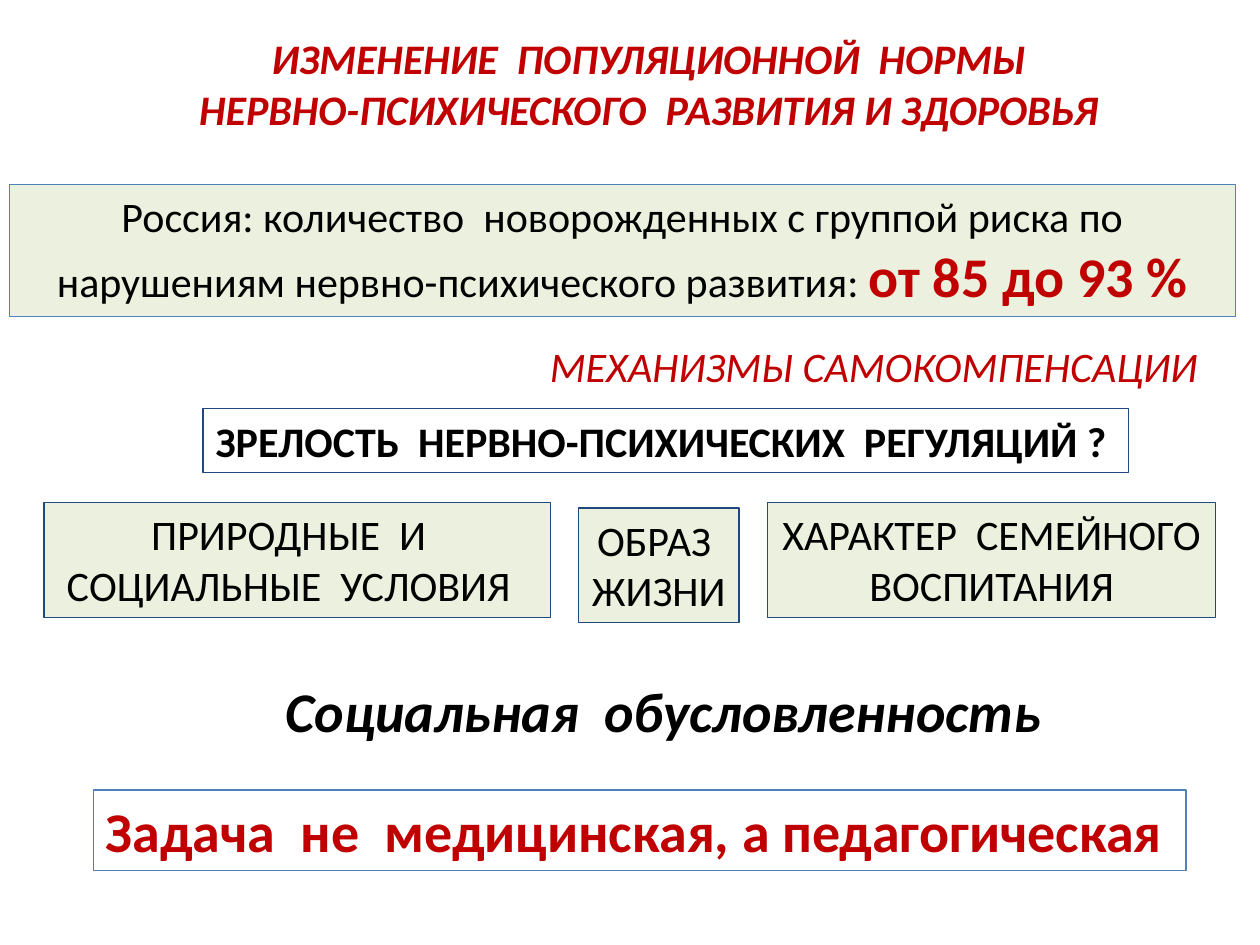
from pptx import Presentation
from pptx.dml.color import RGBColor
from pptx.enum.shapes import MSO_SHAPE as Shape
from pptx.enum.text import MSO_ANCHOR as Anchor, MSO_AUTO_SIZE as AutoSize, PP_ALIGN as Align
from pptx.util import Pt

RED, BLACK, PALE_GREEN, BLUE, NAVY = "C00000", "000000", "EBF1DE", "4F81BD", "1F497D"


def color(hex_value):
    return RGBColor.from_string(hex_value)


def set_all(target, values):
    for name, value in values.items():
        setattr(target, name, value)


def write(holder, lines, aligns, right_inset=7.2):
    frame = holder.text_frame
    set_all(frame, dict(word_wrap=True, auto_size=AutoSize.NONE, vertical_anchor=Anchor.TOP,
                        margin_left=Pt(7.2), margin_right=Pt(right_inset),
                        margin_top=Pt(3.6), margin_bottom=Pt(3.6)))
    for index, (line, align) in enumerate(zip(lines, aligns)):
        paragraph = frame.add_paragraph() if index else frame.paragraphs[0]
        paragraph.alignment = align
        for text, size, hex_value, bold, italic in line:
            run = paragraph.add_run()
            run.text = text
            set_all(run.font, dict(name="Calibri", size=Pt(size), bold=bold, italic=italic))
            run.font.color.rgb = color(hex_value)


def part(text, size=24, hex_value=BLACK, bold=False, italic=False):
    return text, size, hex_value, bold, italic


def add_box(slide, place, outline, fill=None):
    box = slide.shapes.add_shape(Shape.RECTANGLE, *map(Pt, place))
    box.shadow.inherit = False
    if fill:
        box.fill.solid()
        box.fill.fore_color.rgb = color(fill)
    else:
        box.fill.background()
    box.line.color.rgb = color(outline)
    box.line.width = Pt(0.75)
    return box


def add_label(slide, place, line, align, right_inset=7.2):
    label = slide.shapes.add_textbox(*map(Pt, place))
    write(label, [line], [align], right_inset)


def add_title(slide, place, texts):
    title = slide.shapes.title
    set_all(title, dict(zip(("left", "top", "width", "height"), map(Pt, place))))
    lines = [[part(text, 24, RED, True, True)] for text in texts]
    write(title, lines, [Align.CENTER] * len(lines))


def add_factors(slide):
    factors = [
        ((25.2, 287.3, 289.4, 65.5), ["ПРИРОДНЫЕ  И", "СОЦИАЛЬНЫЕ  УСЛОВИЯ"], 17),
        ((330.5, 290.2, 91.9, 65.5), ["ОБРАЗ ", "ЖИЗНИ"], 7.2),
        ((438.5, 287.3, 256.3, 65.5), ["ХАРАКТЕР  СЕМЕЙНОГО", "ВОСПИТАНИЯ"], 7.2),
    ]
    for place, texts, right_inset in factors:
        factor = add_box(slide, place, NAVY, PALE_GREEN)
        write(factor, [[part(text)] for text in texts], [Align.CENTER] * 2, right_inset)


def main():
    deck = Presentation()
    set_all(deck, dict(slide_width=Pt(720), slide_height=Pt(540)))
    slide = deck.slides.add_slide(deck.slide_layouts[5])

    add_title(slide, (92.9, 15.1, 555.8, 65.5),
              ["ИЗМЕНЕНИЕ  ПОПУЛЯЦИОННОЙ  НОРМЫ",
               "НЕРВНО-ПСИХИЧЕСКОГО  РАЗВИТИЯ И ЗДОРОВЬЯ"])

    risk = add_box(slide, (5.4, 105.5, 700.5, 75.3), BLUE, PALE_GREEN)
    write(risk, [[part("Россия: количество  новорожденных с группой риска по "
                       "нарушениям нервно-психического развития: "),
                  part("от 85 до 93 %", 32, RED, True)]], [Align.CENTER])

    add_label(slide, (292.3, 190.8, 410.4, 36),
              [part("МЕХАНИЗМЫ САМОКОМПЕНСАЦИИ", 24, RED, italic=True)], Align.RIGHT, 18.5)

    maturity = add_box(slide, (116.1, 233.6, 529, 36.3), NAVY)
    write(maturity, [[part("ЗРЕЛОСТЬ  НЕРВНО-ПСИХИЧЕСКИХ  РЕГУЛЯЦИЙ ?", bold=True)]], [Align.LEFT])

    add_factors(slide)

    add_label(slide, (156.2, 383, 450.7, 46.1),
              [part("Социальная  обусловленность", 32, BLACK, True, True)], Align.LEFT)

    task = add_box(slide, (53.3, 451.4, 624.5, 46.1), BLUE)
    write(task, [[part("Задача  не  медицинская, а педагогическая", 32, RED, True)]], [Align.LEFT])

    deck.save("out.pptx")


if __name__ == "__main__":
    main()
